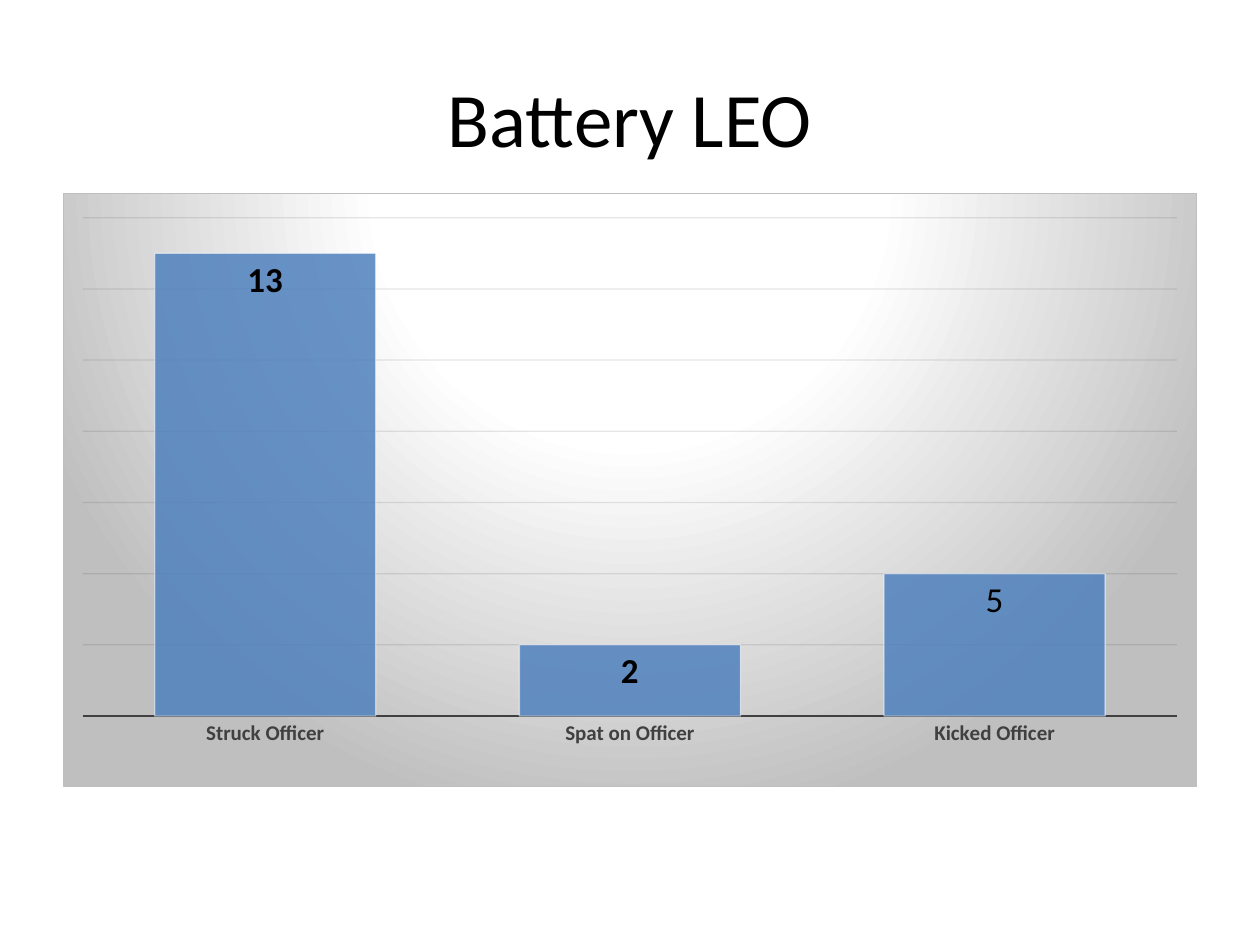
from lxml.etree import SubElement
from pptx import Presentation
from pptx.chart.data import CategoryChartData
from pptx.dml.color import RGBColor
from pptx.enum.chart import XL_CHART_TYPE, XL_LABEL_POSITION, XL_TICK_MARK
from pptx.enum.text import MSO_ANCHOR, PP_ALIGN
from pptx.oxml import parse_xml
from pptx.oxml.ns import nsdecls, qn
from pptx.util import Pt

FONT = "Calibri"
COLORS = {
    "text": "000000",
    "axis": "404040",
    "grid": "0D0D0D",
    "bar": "4F81BD",
    "light": "FFFFFF",
    "shade": "BFBFBF",
}
COUNTS = {"Struck Officer": 13, "Spat on Officer": 2, "Kicked Officer": 4}
PLOT = {"x": 0.017, "y": 0.041, "w": 0.966, "h": 0.84}


def rgb(name):
    return RGBColor.from_string(COLORS[name])


def style_font(font, size, color, bold=False):
    font.name = FONT
    font.size = Pt(size)
    font.bold = bold
    font.color.rgb = rgb(color)


def style_line(line, color, width, alpha=100):
    line.color.rgb = rgb(color)
    line.width = Pt(width)
    set_alpha(line.fill, alpha, line._get_or_add_ln())


def set_alpha(fill, alpha, parent):
    if alpha < 100:
        clr = parent.find(qn("a:solidFill")).find(qn("a:srgbClr"))
        SubElement(clr, qn("a:alpha")).set("val", str(alpha * 1000))


def add_title(slide, text):
    sp = slide.shapes.add_textbox(Pt(36), Pt(21.6), Pt(648), Pt(90))
    tf = sp.text_frame
    tf.word_wrap = True
    tf.vertical_anchor = MSO_ANCHOR.MIDDLE
    p = tf.paragraphs[0]
    p.text = text
    p.alignment = PP_ALIGN.CENTER
    style_font(p.runs[0].font, 44, "text")


def set_chart_background(chart):
    stops = "".join(
        f'<a:gs pos="{pos * 1000}"><a:srgbClr val="{COLORS[name]}"/></a:gs>'
        for pos, name in ((0, "light"), (39, "light"), (100, "shade"))
    )
    background = parse_xml(
        f'<c:spPr {nsdecls("c", "a")}><a:gradFill><a:gsLst>{stops}</a:gsLst>'
        '<a:path path="circle">'
        '<a:fillToRect l="50000" t="-80000" r="50000" b="180000"/></a:path>'
        f'</a:gradFill><a:ln w="{Pt(0.75)}"><a:solidFill>'
        f'<a:srgbClr val="{COLORS["shade"]}"/></a:solidFill></a:ln></c:spPr>'
    )
    chart._chartSpace.find(qn("c:chart")).addnext(background)


def set_plot_layout(chart):
    area = chart._chartSpace.find(qn("c:chart")).find(qn("c:plotArea"))
    for old in area.findall(qn("c:layout")):
        area.remove(old)
    modes = '<c:xMode val="edge"/><c:yMode val="edge"/>'
    sizes = "".join(f'<c:{key} val="{val}"/>' for key, val in PLOT.items())
    area.insert(0, parse_xml(
        f'<c:layout {nsdecls("c")}><c:manualLayout>'
        f'<c:layoutTarget val="inner"/>{modes}{sizes}'
        '</c:manualLayout></c:layout>'
    ))


def style_axes(chart):
    cat = chart.category_axis
    cat.major_tick_mark = XL_TICK_MARK.NONE
    cat.minor_tick_mark = XL_TICK_MARK.NONE
    style_font(cat.tick_labels.font, 12, "axis", True)
    style_line(cat.format.line, "axis", 1.5)
    val = chart.value_axis
    val.visible = False
    val.minimum_scale, val.maximum_scale, val.major_unit = 0, 14, 2
    val.has_major_gridlines = True
    style_line(val.major_gridlines.format.line, "grid", 0.75, 10)


def style_bars(plot):
    plot.gap_width = 65
    plot.vary_by_categories = False
    series = plot.series[0]
    fill = series.format.fill
    fill.solid()
    fill.fore_color.rgb = rgb("bar")
    set_alpha(fill, 85, series._element.find(qn("c:spPr")))
    style_line(series.format.line, "light", 0.75, 50)
    labels = series.data_labels
    labels.show_value = True
    labels.number_format = "General"
    labels.number_format_is_linked = False
    labels.position = XL_LABEL_POSITION.INSIDE_END
    style_font(labels.font, 20, "text", True)
    kicked = series.points[2].data_label
    p = kicked.text_frame.paragraphs[0]
    p.text = "5"
    style_font(p.runs[0].font, 20, "text")
    kicked.position = XL_LABEL_POSITION.INSIDE_END


def add_column_chart(slide):
    data = CategoryChartData()
    data.categories = list(COUNTS)
    data.add_series("Series 1", list(COUNTS.values()))
    chart = slide.shapes.add_chart(
        XL_CHART_TYPE.COLUMN_CLUSTERED, Pt(36), Pt(110.2), Pt(648), Pt(339.8), data
    ).chart
    chart.has_legend = False
    chart.has_title = False
    style_font(chart.font, 10, "text")
    set_chart_background(chart)
    set_plot_layout(chart)
    style_axes(chart)
    style_bars(chart.plots[0])


def main():
    prs = Presentation()
    prs.slide_width, prs.slide_height = Pt(720), Pt(540)
    slide = prs.slides.add_slide(prs.slide_layouts[6])
    add_title(slide, "Battery LEO")
    add_column_chart(slide)
    prs.save("out.pptx")


if __name__ == "__main__":
    main()
